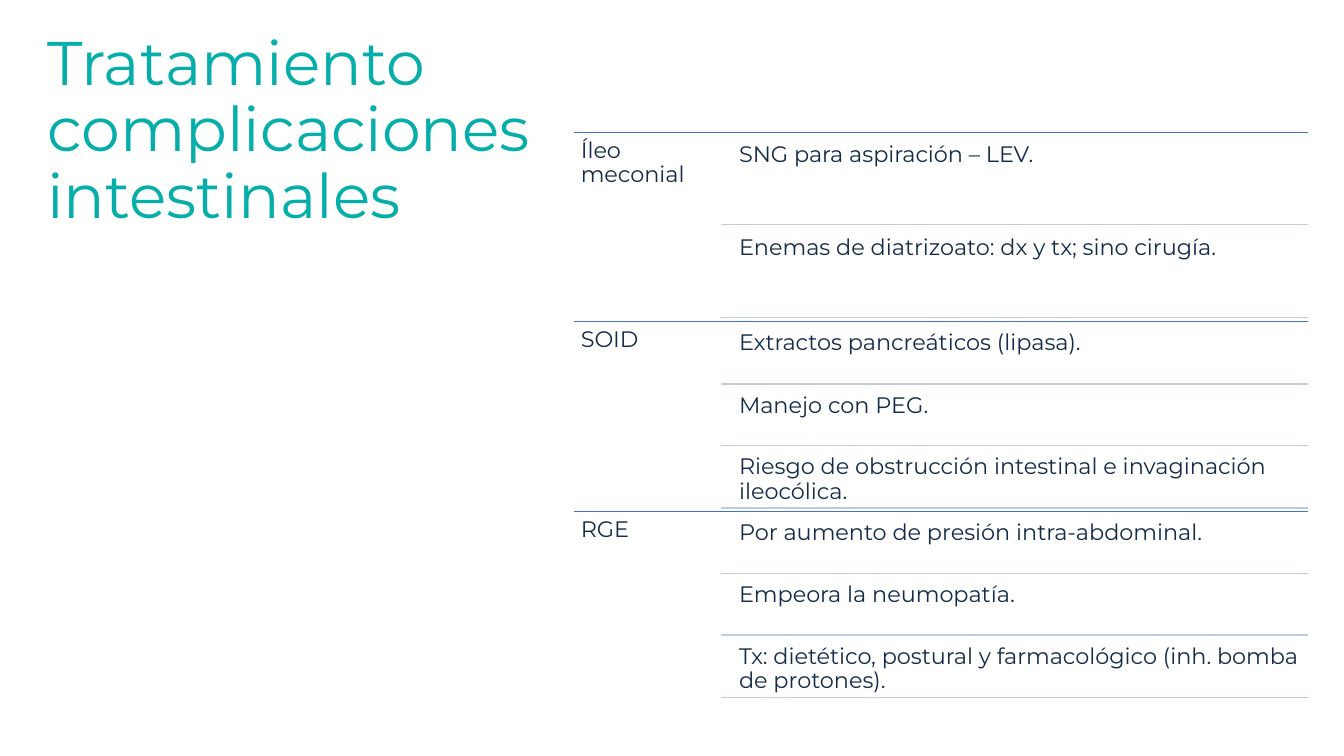
from dataclasses import dataclass

from lxml import etree
from pptx import Presentation
from pptx.dml.color import RGBColor
from pptx.enum.shapes import MSO_CONNECTOR
from pptx.enum.text import MSO_ANCHOR, MSO_AUTO_SIZE, PP_ALIGN
from pptx.oxml.ns import qn
from pptx.slide import Slide
from pptx.text.text import _Paragraph as Paragraph
from pptx.util import Emu, Pt

EMU_PER_PX = 9144  # 100 px to the inch
SLIDE_W, SLIDE_H = 1333, 750
FONT = "Montserrat"
COLORS = {
    "title": "06AEAA",
    "text": "152B48",
    "section_rule": "4472C4",
    "measure_rule": "C1C9E4",
}

# Outline geometry, in px
LEFT, RIGHT, TOP = 569, 1297, 131
SECTION_H = 188
NAME_W = 145
RULE_LEFT, MEASURE_LEFT = 715, 726
INSET = 7
GAP_SHARE = 0.05  # gap between measures, as a share of a measure's height


@dataclass(frozen=True)
class Complication:
    name: str
    measures: tuple[str, ...]


COMPLICATIONS = (
    Complication("Íleo meconial", (
        "SNG para aspiración – LEV.",
        "Enemas de diatrizoato: dx y tx; sino cirugía.",
    )),
    Complication("SOID", (
        "Extractos pancreáticos (lipasa).",
        "Manejo con PEG.",
        "Riesgo de obstrucción intestinal e invaginación ileocólica.",
    )),
    Complication("RGE", (
        "Por aumento de presión intra-abdominal.",
        "Empeora la neumopatía.",
        "Tx: dietético, postural y farmacológico (inh. bomba de protones).",
    )),
)


def px(length: int) -> Emu:
    return Emu(length * EMU_PER_PX)


def format_paragraph(paragraph: Paragraph, size: int, color: str) -> None:
    paragraph.alignment = PP_ALIGN.LEFT
    paragraph.line_spacing = 0.9
    paragraph.font.name = FONT
    paragraph.font.size = Pt(size)
    paragraph.font.color.rgb = RGBColor.from_string(COLORS[color])


def add_title(slide: Slide, text: str) -> None:
    title = slide.shapes.title
    title.left, title.top, title.width, title.height = px(37), px(0), px(511), px(262)
    frame = title.text_frame
    frame.text = text
    frame.word_wrap = True
    frame.auto_size = MSO_AUTO_SIZE.NONE
    frame.vertical_anchor = MSO_ANCHOR.MIDDLE
    format_paragraph(frame.paragraphs[0], 44, "title")


def add_rule(slide: Slide, left: int, y: int, color: str, width: float) -> None:
    rule = slide.shapes.add_connector(
        MSO_CONNECTOR.STRAIGHT, px(left), px(y), px(RIGHT), px(y))
    rule.line.color.rgb = RGBColor.from_string(COLORS[color])
    rule.line.width = Pt(width)
    etree.SubElement(rule._element.spPr, qn("a:effectLst"))


def add_text(slide: Slide, text: str, left: int, top: int, width: int, height: int) -> None:
    box = slide.shapes.add_textbox(px(left), px(top), px(width), px(height))
    frame = box.text_frame
    frame.word_wrap = True
    frame.margin_left = frame.margin_right = px(INSET)
    frame.margin_top = frame.margin_bottom = px(INSET)
    frame.text = text
    format_paragraph(frame.paragraphs[0], 16, "text")


def add_complication(slide: Slide, complication: Complication, top: int) -> None:
    add_rule(slide, LEFT, top, "section_rule", 0.5)
    add_text(slide, complication.name, LEFT, top, NAME_W, SECTION_H)

    # Measures share the section's height, with a gap before and after each
    count = len(complication.measures)
    height = SECTION_H / (count + (count + 1) * GAP_SHARE)
    gap = height * GAP_SHARE
    for index, measure in enumerate(complication.measures):
        measure_top = top + gap + index * (height + gap)
        add_text(slide, measure, MEASURE_LEFT, round(measure_top),
                 RIGHT - MEASURE_LEFT, round(height))
        add_rule(slide, RULE_LEFT, round(measure_top + height), "measure_rule", 1)


def main() -> None:
    prs = Presentation()
    prs.slide_width, prs.slide_height = px(SLIDE_W), px(SLIDE_H)
    slide = prs.slides.add_slide(prs.slide_layouts[5])  # title only

    add_title(slide, "Tratamiento complicaciones intestinales")
    for index, complication in enumerate(COMPLICATIONS):
        add_complication(slide, complication, TOP + index * SECTION_H)

    prs.save("out.pptx")


if __name__ == "__main__":
    main()
